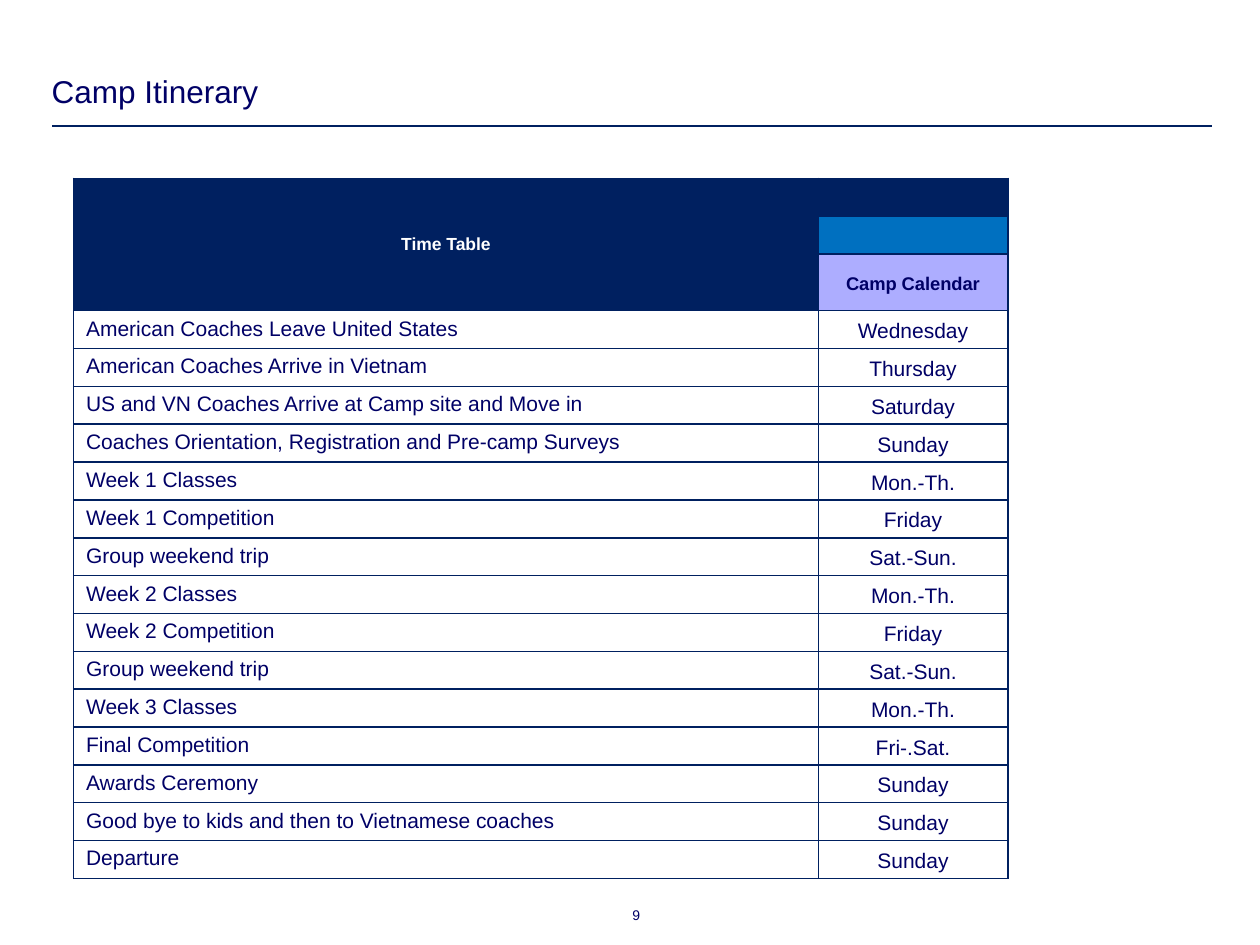
"""Build the Camp Itinerary slide with its timetable."""
from lxml.etree import SubElement
from pptx import Presentation
from pptx.dml.color import RGBColor
from pptx.enum.shapes import MSO_CONNECTOR
from pptx.enum.text import MSO_ANCHOR, PP_ALIGN
from pptx.oxml.ns import qn
from pptx.util import Pt

TITLE = "Camp Itinerary"
PAGE = "9"
HEAD = "Time Table"
SUBHEAD = "Camp Calendar"
EVENTS = [
    ("American Coaches Leave United States", "Wednesday"),
    ("American Coaches Arrive in Vietnam", "Thursday"),
    ("US and VN Coaches Arrive at Camp site and Move in", "Saturday"),
    ("Coaches Orientation, Registration and Pre-camp Surveys", "Sunday"),
    ("Week 1 Classes", "Mon.-Th."),
    ("Week 1 Competition", "Friday"),
    ("Group weekend trip", "Sat.-Sun."),
    ("Week 2 Classes", "Mon.-Th."),
    ("Week 2 Competition", "Friday"),
    ("Group weekend trip", "Sat.-Sun."),
    ("Week 3 Classes", "Mon.-Th."),
    ("Final Competition", "Fri-.Sat."),
    ("Awards Ceremony", "Sunday"),
    ("Good bye to kids and then to Vietnamese coaches", "Sunday"),
    ("Departure", "Sunday"),
]
COLORS = {"ink": "000066", "navy": "002060", "blue": "0070C0",
          "lilac": "ADADFF", "white": "FFFFFF"}
FONT = "Arial"
WIDTHS = (425.6, 108.3)
ROW, TALL = 21.45, 32.3
HEADS = 3


def tint(name):
    return RGBColor.from_string(COLORS[name])


def write(frame, text, size=12, color="ink", bold=False, align=PP_ALIGN.LEFT,
          space=1.0, gap=0):
    para = frame.paragraphs[0]
    para.alignment = align
    para.line_spacing = space
    para.space_before = para.space_after = Pt(gap)
    run = para.add_run()
    run.text = text
    run.font.name = FONT
    run.font.size = Pt(size)
    run.font.bold = bold
    run.font.color.rgb = tint(color)


def add_box(slide, left, top, width, height, text, inset=0,
            anchor=MSO_ANCHOR.TOP, **style):
    frame = slide.shapes.add_textbox(Pt(left), Pt(top), Pt(width), Pt(height)).text_frame
    frame.word_wrap = True
    frame.vertical_anchor = anchor
    frame.margin_left = frame.margin_right = Pt(inset)
    frame.margin_top = frame.margin_bottom = Pt(inset)
    write(frame, text, **style)


def dress(cell, fill, side, edge):
    props = cell._tc.get_or_add_tcPr()
    for tag in ("a:lnL", "a:lnR", "a:lnT", "a:lnB"):
        line = SubElement(props, qn(tag), w=str(Pt(1)))
        paint = SubElement(line, qn("a:solidFill"))
        SubElement(paint, qn("a:srgbClr"), val=COLORS["navy"])
    cell.fill.solid()
    cell.fill.fore_color.rgb = tint(fill)
    cell.margin_left = cell.margin_right = Pt(side)
    cell.margin_top = cell.margin_bottom = Pt(edge)


def add_rule(slide):
    rule = slide.shapes.add_connector(MSO_CONNECTOR.STRAIGHT, Pt(30), Pt(72), Pt(692.6), Pt(72))
    rule.line.color.rgb = tint("navy")
    rule.line.width = Pt(1.5)
    SubElement(rule._element.spPr, qn("a:effectLst"))


def add_plan(slide):
    count = HEADS + len(EVENTS)
    high = ROW * (count - 1) + TALL
    table = slide.shapes.add_table(count, 2, Pt(42), Pt(102), Pt(sum(WIDTHS)), Pt(high)).table
    table.first_row = table.horz_banding = False
    for col, width in zip(table.columns, WIDTHS):
        col.width = Pt(width)
    for row in table.rows:
        row.height = Pt(ROW)
    table.rows[HEADS - 1].height = Pt(TALL)

    for row, fill in enumerate(("navy", "blue", "lilac")):
        dress(table.cell(row, 0), "navy", 7.2, 0)
        dress(table.cell(row, 1), fill, 5.04, 0)
    head = table.cell(0, 0)
    head.merge(table.cell(HEADS - 1, 0))
    head.vertical_anchor = MSO_ANCHOR.MIDDLE
    write(head.text_frame, HEAD, size=10, color="white", bold=True, align=PP_ALIGN.CENTER)

    day_style = {"align": PP_ALIGN.CENTER, "space": 1.15, "gap": 0.1}
    sub = table.cell(HEADS - 1, 1)
    sub.vertical_anchor = MSO_ANCHOR.MIDDLE
    write(sub.text_frame, SUBHEAD, size=10.5, bold=True, **day_style)
    for row, (event, day) in enumerate(EVENTS, HEADS):
        left, right = table.cell(row, 0), table.cell(row, 1)
        dress(left, "white", 7.2, 3.6)
        write(left.text_frame, event)
        dress(right, "white", 5.04, 0)
        right.vertical_anchor = MSO_ANCHOR.MIDDLE
        write(right.text_frame, day, **day_style)


def main():
    deck = Presentation()
    deck.slide_width, deck.slide_height = Pt(720), Pt(540)
    slide = deck.slides.add_slide(deck.slide_layouts[6])
    add_box(slide, 293.8, 519, 72, 9.4, PAGE, size=8, align=PP_ALIGN.RIGHT, space=0.95)
    add_rule(slide)
    add_box(slide, 26, 39, 621.4, 28, TITLE, inset=3.6, anchor=MSO_ANCHOR.BOTTOM,
            size=18, space=0.95)
    add_plan(slide)
    deck.save("out.pptx")


if __name__ == "__main__":
    main()
